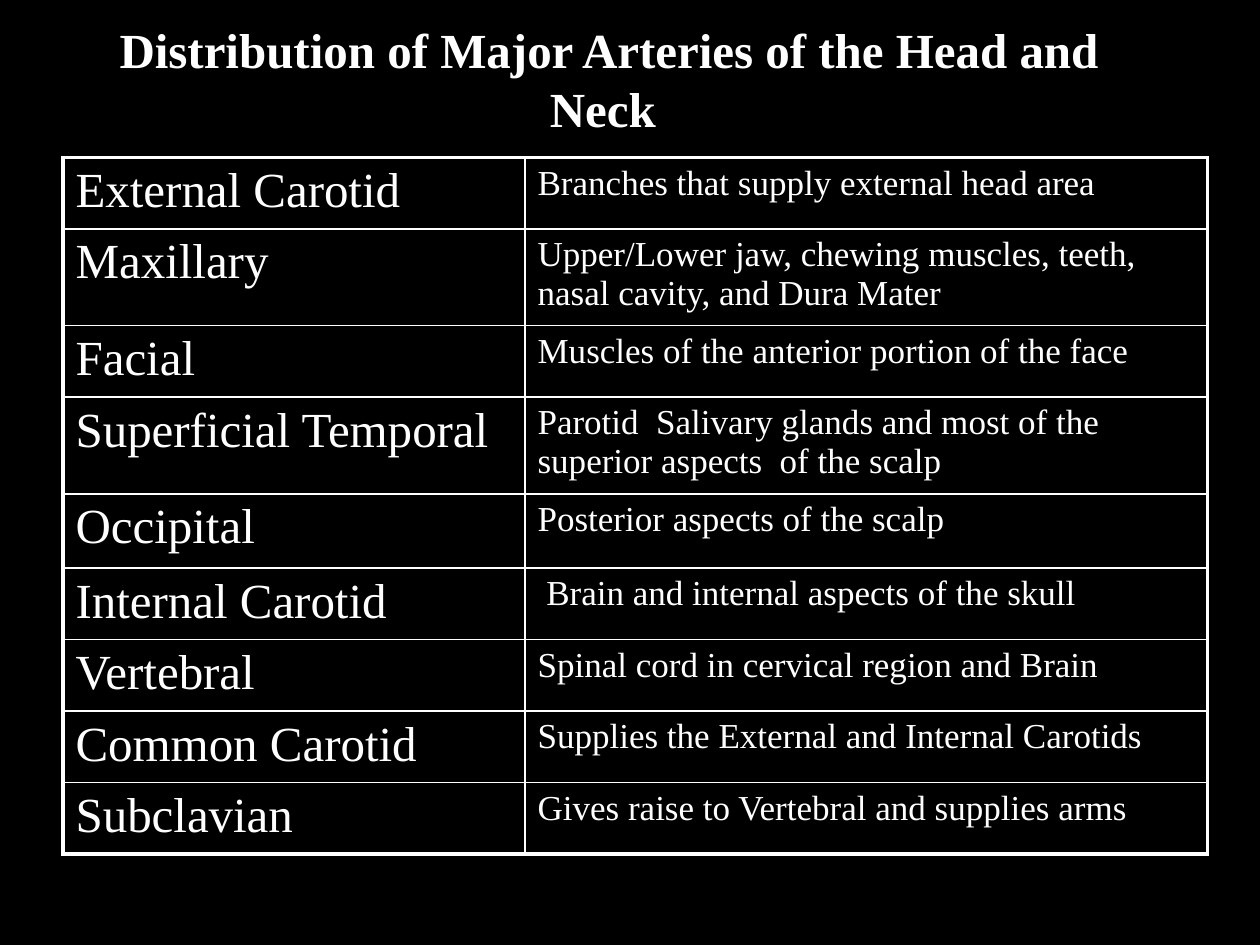
from dataclasses import dataclass

from lxml.etree import SubElement
from pptx import Presentation
from pptx.dml.color import RGBColor
from pptx.enum.text import MSO_ANCHOR, PP_ALIGN
from pptx.oxml.ns import qn
from pptx.util import Pt


@dataclass(frozen=True)
class Theme:
    back: str = "000000"
    ink: str = "FFFFFF"
    font: str = "Times New Roman"
    large: float = 28
    small: float = 20
    thick: float = 2.25
    thin: float = 1


THEME = Theme()
ROWS = [
    ("External Carotid", "Branches that supply external head area"),
    ("Maxillary", "Upper/Lower jaw, chewing muscles, teeth, nasal cavity, and Dura Mater"),
    ("Facial", "Muscles of the anterior portion of the face"),
    ("Superficial Temporal",
     "Parotid  Salivary glands and most of the superior aspects  of the scalp"),
    ("Occipital", "Posterior aspects of the scalp"),
    ("Internal Carotid", " Brain and internal aspects of the skull"),
    ("Vertebral", "Spinal cord in cervical region and Brain"),
    ("Common Carotid", "Supplies the External and Internal Carotids"),
    ("Subclavian", "Gives raise to Vertebral and supplies arms"),
]
WIDTHS = (264, 390)
HEIGHTS = [42.5 if name == "Occipital" else 40.5 for name, _ in ROWS]


def write(frame, text, size, bold=False):
    frame.text = text
    para = frame.paragraphs[0]
    font = para.runs[0].font
    font.name, font.size, font.bold = THEME.font, Pt(size), bold
    font.color.rgb = RGBColor.from_string(THEME.ink)
    return para


def add_title(slide, text, left, top, width, height):
    frame = slide.shapes.add_textbox(Pt(left), Pt(top), Pt(width), Pt(height)).text_frame
    frame.word_wrap = True
    frame.vertical_anchor = MSO_ANCHOR.MIDDLE
    write(frame, text, THEME.large, True).alignment = PP_ALIGN.CENTER


def space_before(para, percent):
    """Set the gap as a share of the line, which python-pptx has no method for."""
    gap = SubElement(para._p.get_or_add_pPr(), qn("a:spcBef"))
    SubElement(gap, qn("a:spcPct"), val=str(percent * 1000))


def draw_edges(cell, outer):
    """Rule all four sides, with thick lines on the sides named in outer."""
    props = cell._tc.get_or_add_tcPr()
    for side in "LRTB":
        size = THEME.thick if side in outer else THEME.thin
        line = SubElement(props, qn(f"a:ln{side}"), w=str(Pt(size)))
        fill = SubElement(line, qn("a:solidFill"))
        SubElement(fill, qn("a:srgbClr"), val=THEME.ink)


def add_grid(slide, rows, left, top, widths, heights):
    table = slide.shapes.add_table(len(rows), len(widths), Pt(left), Pt(top),
                                   Pt(sum(widths)), Pt(sum(heights))).table
    table.first_row = table.horz_banding = False
    for column, width in zip(table.columns, widths):
        column.width = Pt(width)
    for i, (texts, height) in enumerate(zip(rows, heights)):
        table.rows[i].height = Pt(height)
        ends = ("T" if i == 0 else "") + ("B" if i == len(rows) - 1 else "")
        for j, (text, size, side) in enumerate(zip(texts, (THEME.large, THEME.small), "LR")):
            cell = table.cell(i, j)
            space_before(write(cell.text_frame, text, size), 20)
            draw_edges(cell, ends + side)
            cell.fill.background()


def main():
    deck = Presentation()
    deck.slide_width, deck.slide_height = Pt(720), Pt(540)
    slide = deck.slides.add_slide(deck.slide_layouts[6])
    fill = slide.background.fill
    fill.solid()
    fill.fore_color.rgb = RGBColor.from_string(THEME.back)
    add_title(slide, "Distribution of Major Arteries of the Head and Neck ", 42, 0, 612, 90)
    add_grid(slide, ROWS, 36, 90, WIDTHS, HEIGHTS)
    deck.save("out.pptx")


if __name__ == "__main__":
    main()
